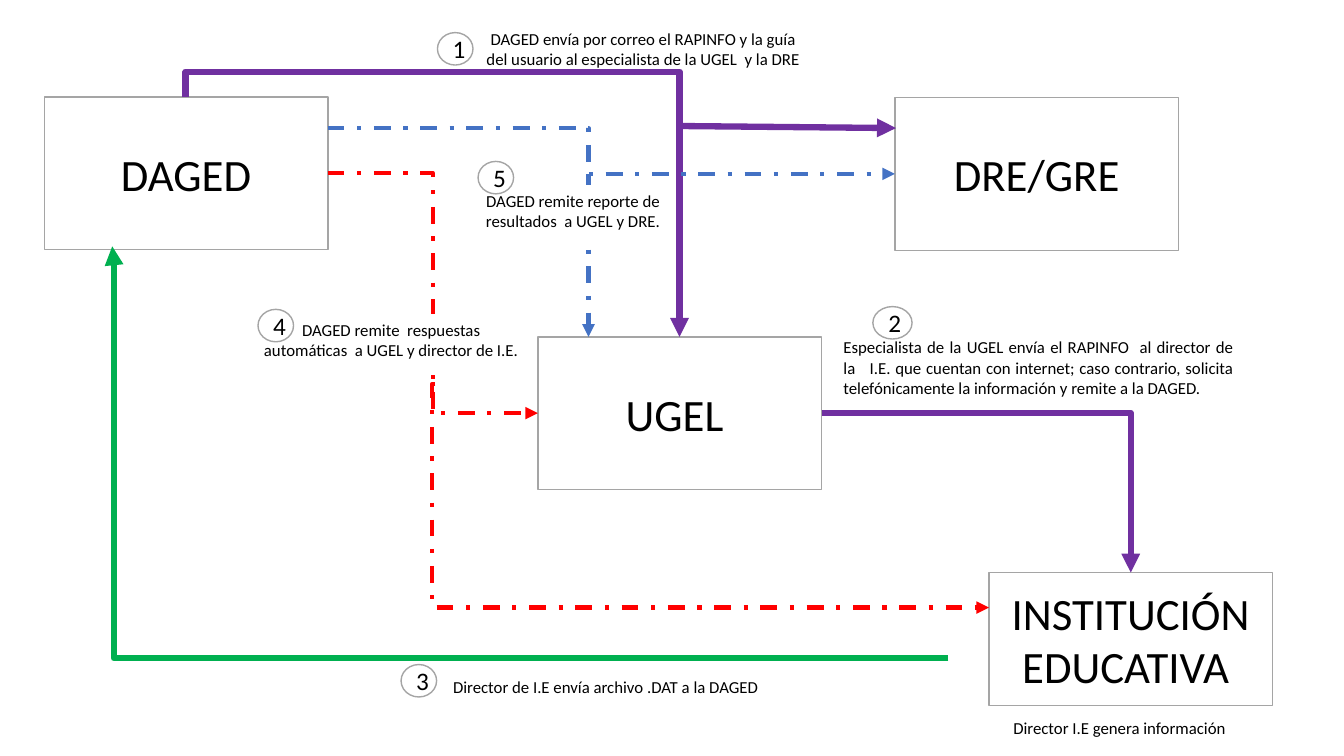
from lxml.etree import SubElement
from pptx import Presentation
from pptx.dml.color import RGBColor
from pptx.enum.dml import MSO_LINE
from pptx.enum.shapes import MSO_CONNECTOR, MSO_SHAPE
from pptx.enum.text import MSO_ANCHOR, PP_ALIGN
from pptx.oxml.ns import qn
from pptx.util import Pt

COLORS = {
    "white": "FFFFFF", "black": "000000", "gray": "A5A5A5", "red": "FF0000",
    "purple": "7030A0", "green": "00B050", "blue": "4472C4",
}
FONT = "Calibri"
BOX_W = 202.6
BOX_H = 109
BADGE_W, BADGE_H = 25.4, 23.2

BOXES = [
    ("DAGED", 31.6, 69.2, BOX_H),
    ("UGEL ", 384.2, 240.6, BOX_H),
    ("INSTITUCIÓN EDUCATIVA ", 706.4, 409, 95),
    ("DRE/GRE", 639.2, 69.8, BOX_H),
]

FLOWS = [
    ("red", (234, 123.7), (384.2, 295.1), "bentConnector3", 0.5),
    ("purple", (132.6, 69.2), (485.4, 240.6), "vertical", -0.105),
    ("purple", (586.8, 295.1), (807.7, 409), "bentConnector2", None),
    ("green", (677.5, 470.2), (80.2, 176), "bentConnector3", 0.998),
    ("red", (311, 274.3), (706.4, 434), "bentConnector3", -0.006),
    ("blue", (234, 91.5), (639.2, 124.2), "bentConnector3", 0.46),
    ("blue", (420.4, 124.2), (420.4, 240.6), "line", None),
    ("purple", (484.8, 90), (640, 91.5), "line", None),
]

CAPTIONS = [
    ("DAGED envía por correo el RAPINFO y la guía del usuario al especialista "
     "de la UGEL  y la DRE", 337.7, 22.3, 243.4, 25.2, PP_ALIGN.CENTER),
    ("Especialista de la UGEL envía el RAPINFO  al director de la   I.E. que "
     "cuentan con internet; caso contrario, solicita telefónicamente la "
     "información y remite a la DAGED.", 595.4, 240.5, 293, 44, PP_ALIGN.JUSTIFY),
    ("Director de I.E envía archivo .DAT a la DAGED",
     311, 478, 243.4, 25.2, PP_ALIGN.CENTER),
    ("Director I.E genera información", 698.4, 509, BOX_W, 22.3, PP_ALIGN.CENTER),
    ("DAGED remite  respuestas automáticas  a UGEL y director de I.E.",
     179.3, 224.6, 200.2, 36, PP_ALIGN.CENTER),
    ("DAGED remite reporte de resultados  a UGEL y DRE.",
     337.7, 132.5, 143.3, 36, PP_ALIGN.CENTER),
]

BADGES = [
    ("1", 312.5, 23.3, BADGE_W), ("2", 623.5, 219, 28),
    ("3", 286.5, 474.7, BADGE_W), ("4", 184.3, 221, BADGE_W),
    ("5", 341.5, 115.3, BADGE_W),
]


def rgb(name):
    return RGBColor.from_string(COLORS[name])


def add_label(shapes, kind, text, x, y, w, h, size, line, align=PP_ALIGN.CENTER):
    s = shapes.add_shape(kind, Pt(x), Pt(y), Pt(w), Pt(h))
    s.shadow.inherit = False
    s.fill.solid()
    s.fill.fore_color.rgb = rgb("white")
    s.line.color.rgb = rgb(line)
    s.line.width = Pt(1)
    tf = s.text_frame
    tf.word_wrap = True
    tf.vertical_anchor = MSO_ANCHOR.MIDDLE
    p = tf.paragraphs[0]
    p.text = text
    p.alignment = align
    p.font.name = FONT
    p.font.size = Pt(size)
    p.font.color.rgb = rgb("black")


def add_flow(shapes, color, start, end, route, bend):
    (x1, y1), (x2, y2) = start, end
    vertical = route == "vertical"
    if vertical:
        cx, cy = (x1 + x2) / 2, (y1 + y2) / 2
        half_w, half_h = (y2 - y1) / 2, (x2 - x1) / 2
        x1, y1, x2, y2 = cx - half_w, cy - half_h, cx + half_w, cy + half_h
    kind = MSO_CONNECTOR.STRAIGHT if route == "line" else MSO_CONNECTOR.ELBOW
    c = shapes.add_connector(kind, Pt(x1), Pt(y1), Pt(x2), Pt(y2))
    sp_pr = c._element.spPr
    if vertical:
        xfrm = sp_pr.find(qn("a:xfrm"))
        xfrm.set("rot", "16200000")
        xfrm.set("flipH", "1")
    geom = sp_pr.find(qn("a:prstGeom"))
    if route == "bentConnector2":
        geom.set("prst", route)
    if bend is not None:
        guides = geom.find(qn("a:avLst"))
        SubElement(guides, qn("a:gd"), name="adj1", fmla=f"val {round(bend * 100000)}")
    dashed = color in ("red", "blue")
    c.line.color.rgb = rgb(color)
    c.line.width = Pt(3 if dashed else 4.5)
    if dashed:
        c.line.dash_style = MSO_LINE.DASH_DOT
    SubElement(c.line._get_or_add_ln(), qn("a:tailEnd"), type="triangle")
    SubElement(sp_pr, qn("a:effectLst"))


def main():
    prs = Presentation()
    prs.slide_width, prs.slide_height = Pt(960), Pt(540)
    shapes = prs.slides.add_slide(prs.slide_layouts[6]).shapes
    for text, x, y, h in BOXES:
        add_label(shapes, MSO_SHAPE.RECTANGLE, text, x, y, BOX_W, h, 32, "gray")
    for flow in FLOWS:
        add_flow(shapes, *flow)
    for text, x, y, w, h, align in CAPTIONS:
        add_label(shapes, MSO_SHAPE.RECTANGLE, text, x, y, w, h, 12, "white", align)
    for text, x, y, w in BADGES:
        add_label(shapes, MSO_SHAPE.OVAL, text, x, y, w, BADGE_H, 18, "gray")
    prs.save("out.pptx")


if __name__ == "__main__":
    main()
